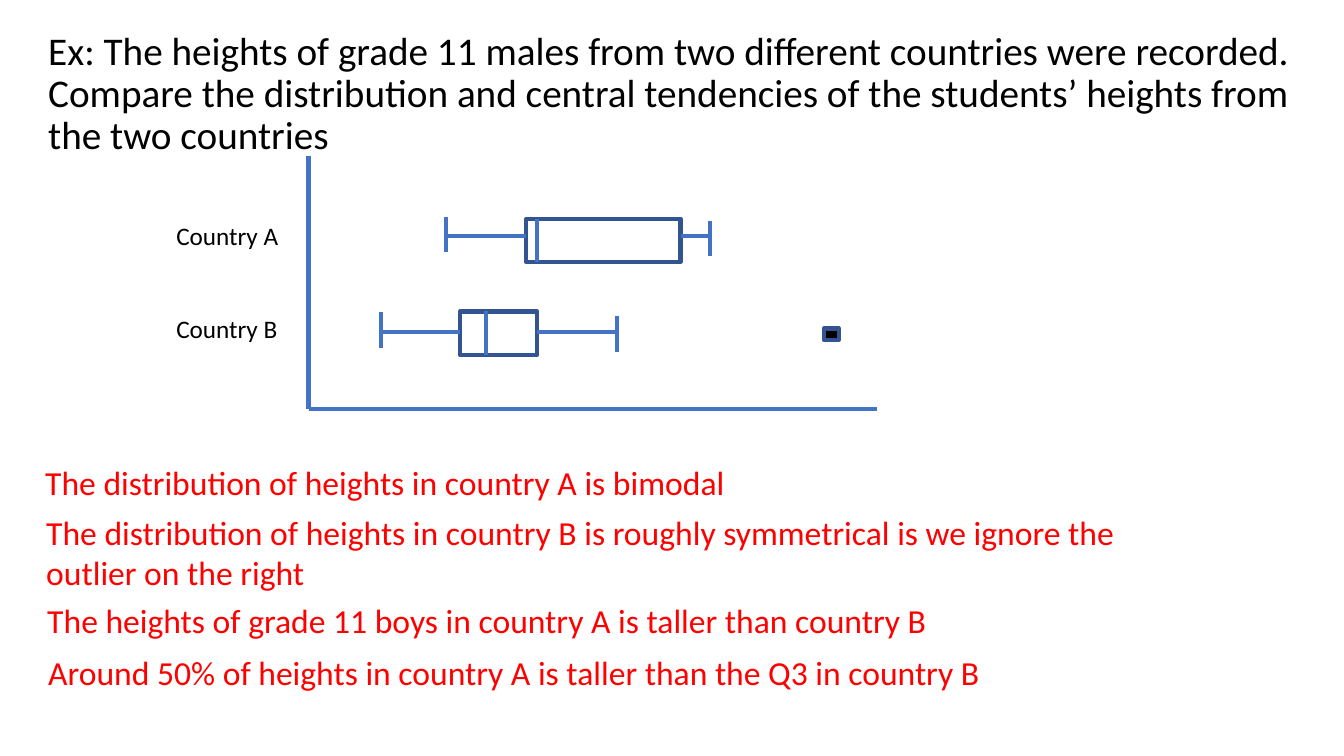
from pptx import Presentation
from pptx.dml.color import RGBColor
from pptx.enum.shapes import MSO_CONNECTOR as Connector, MSO_SHAPE as Preset
from pptx.oxml.ns import qn
from pptx.util import Inches, Pt
from lxml import etree

FONT = "Calibri"
BLACK, RED = "000000", "FF0000"
LINE_BLUE, BOX_BLUE = "4472C4", "325491"
BOX_HEIGHT, CAP_HEIGHT = 0.43, 0.35


def color(hex_text):
    return RGBColor.from_string(hex_text)


def add_text(slide, box, text, size, hex_text, line_spacing=None, space_before=None):
    shape = slide.shapes.add_textbox(*(Inches(value) for value in box))
    shape.text_frame.word_wrap = True
    paragraph = shape.text_frame.paragraphs[0]
    paragraph.line_spacing = line_spacing
    paragraph.space_before = space_before
    run = paragraph.add_run()
    run.text = text
    run.font.name = FONT
    run.font.size = Pt(size)
    run.font.color.rgb = color(hex_text)


def add_line(slide, x1, y1, x2, y2):
    line = slide.shapes.add_connector(
        Connector.STRAIGHT, Inches(x1), Inches(y1), Inches(x2), Inches(y2))
    line.line.color.rgb = color(LINE_BLUE)
    line.line.width = Pt(3)
    etree.SubElement(line._element.spPr, qn("a:effectLst"))


def add_rectangle(slide, box, fill=None):
    shape = slide.shapes.add_shape(
        Preset.RECTANGLE, *(Inches(value) for value in box))
    shape.shadow.inherit = False
    if fill:
        shape.fill.solid()
        shape.fill.fore_color.rgb = color(fill)
    else:
        shape.fill.background()
    shape.line.color.rgb = color(BOX_BLUE)
    shape.line.width = Pt(3)


def add_box_plot(slide, top, numbers, whisker_y, low_cap_y, high_cap_y):
    """Draw one box plot; numbers are the x positions of the five-number summary."""
    low, q1, median, q3, high = numbers
    add_rectangle(slide, (q1, top, q3 - q1, BOX_HEIGHT))
    add_line(slide, median, top, median, top + BOX_HEIGHT)
    # Whiskers and their caps
    for start, end in ((low, q1), (q3, high)):
        add_line(slide, start, top + whisker_y, end, top + whisker_y)
    for x, offset in ((low, low_cap_y), (high, high_cap_y)):
        add_line(slide, x, top + offset, x, top + offset + CAP_HEIGHT)


def add_chart_area(slide, left, top, width, height):
    bottom = top + height
    # Country A, then country B with its outlier
    add_box_plot(slide, top + 0.62, (4.42, 5.22, 5.33, 6.75, 7.04), 0.17, -0.02, 0.02)
    add_box_plot(slide, top + 1.54, (3.78, 4.56, 4.82, 5.33, 6.12), 0.2, 0.01, 0.05)
    add_rectangle(slide, (left + 5.11, top + 1.71, 0.15, 0.11), BLACK)
    # Axes
    add_line(slide, left, bottom, left + width, bottom)
    add_line(slide, left, bottom, left, top)
    # Row labels
    for row, label in enumerate(("Country A", "Country B")):
        add_text(slide, (left - 1.41, top + 0.59 + row * 0.92, 1.45, 0.4),
                 label, 18, BLACK)


def add_question(slide, box):
    add_text(slide, box,
             "Ex: The heights of grade 11 males from two different countries were "
             "recorded. Compare the distribution and central tendencies of the "
             "students’ heights from the two countries",
             28, BLACK, line_spacing=0.9, space_before=Pt(10))


def add_answers(slide, left, top, width):
    answers = (
        (0, 0, 0.5, "The distribution of heights in country A is bimodal"),
        (0.01, 0.5, 0.91, "The distribution of heights in country B is roughly "
                          "symmetrical is we ignore the outlier on the right"),
        (0.02, 1.37, 0.5, "The heights of grade 11 boys in country A is taller "
                          "than country B"),
        (0.03, 1.89, 0.5, "Around 50% of heights in country A is taller than the "
                          "Q3 in country B"),
    )
    for x, y, height, text in answers:
        add_text(slide, (left + x, top + y, width, height), text, 24, RED)


def main():
    presentation = Presentation()
    presentation.slide_width = Inches(13.33)
    presentation.slide_height = Inches(7.5)
    slide = presentation.slides.add_slide(presentation.slide_layouts[6])
    add_chart_area(slide, 3.06, 1.55, 5.64, 2.51)
    add_question(slide, (0.38, 0.26, 12.62, 1.41))
    add_answers(slide, 0.35, 4.53, 11.39)
    presentation.save("out.pptx")


if __name__ == "__main__":
    main()
